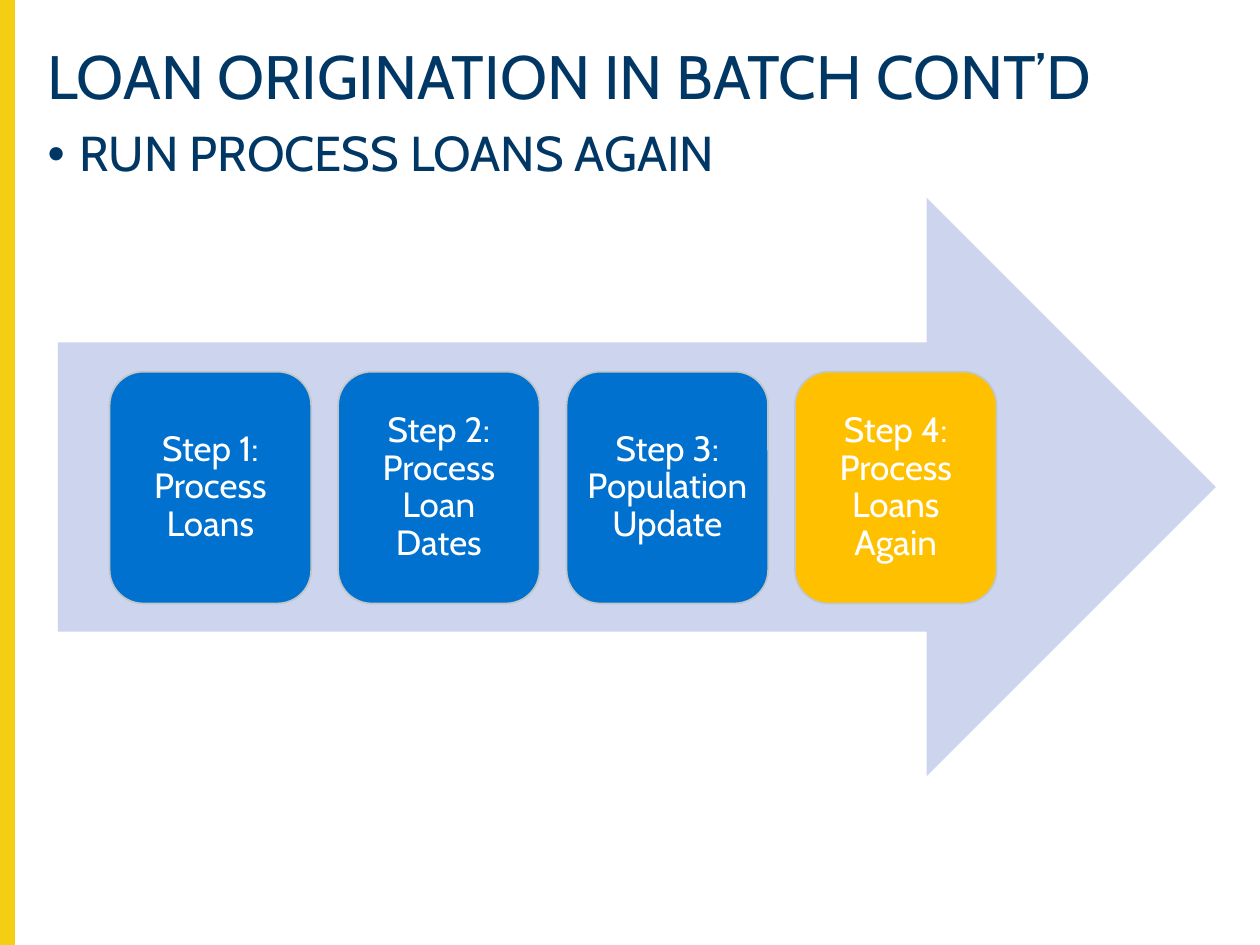
from dataclasses import dataclass

from lxml.etree import SubElement
from pptx import Presentation
from pptx.dml.color import RGBColor as Rgb
from pptx.enum.shapes import MSO_SHAPE as Shape
from pptx.enum.text import MSO_ANCHOR as Anchor, PP_ALIGN as Align
from pptx.oxml.ns import qn
from pptx.util import Inches, Pt


@dataclass(frozen=True)
class Theme:
    font: str = "Cabin"
    navy: str = "003764"
    band: str = "F4CE12"
    pale: str = "CCD5ED"
    blue: str = "0071CE"
    gold: str = "FFC000"
    edge: str = "C3C6C8"
    white: str = "FFFFFF"
    title: int = 35
    body: int = 28
    step: int = 20


class Deck:
    def __init__(self, theme):
        self.theme = theme
        self.show = Presentation()
        self.show.slide_width, self.show.slide_height = Inches(10), Inches(7.5)
        self.slide = self.show.slides.add_slide(self.show.slide_layouts[6])

    def label(self, frame, text, size, color):
        """Fill a text frame with one styled paragraph and return it."""
        frame.word_wrap = True
        frame.text = text
        para = frame.paragraphs[0]
        para.line_spacing = 0.9
        font = para.runs[0].font
        font.name, font.size = self.theme.font, Pt(size)
        font.color.rgb = Rgb.from_string(color)
        return para

    def text(self, box, text, size):
        item = self.slide.shapes.add_textbox(*map(Inches, box))
        item.text_frame.vertical_anchor = Anchor.TOP
        return self.label(item.text_frame, text, size, self.theme.navy)

    def bullet(self, box, text, size):
        para = self.text(box, text, size)
        para.space_before = Pt(10)
        props = para._p.get_or_add_pPr()
        props.set("marL", str(Inches(0.25)))
        props.set("indent", str(-Inches(0.25)))
        SubElement(props, qn("a:buFont")).set("typeface", "Arial")
        SubElement(props, qn("a:buChar")).set("char", "•")

    def shape(self, kind, box, fill, line=None):
        item = self.slide.shapes.add_shape(kind, *map(Inches, box))
        item.shadow.inherit = False
        item.fill.solid()
        item.fill.fore_color.rgb = Rgb.from_string(fill)
        if line:
            item.line.color.rgb = Rgb.from_string(line)
            item.line.width = Pt(1)
        else:
            item.line.fill.background()
        return item

    def step(self, box, text, fill):
        item = self.shape(Shape.ROUNDED_RECTANGLE, box, fill, self.theme.edge)
        frame = item.text_frame
        frame.margin_left = frame.margin_right = Inches(0.08)
        frame.margin_top = frame.margin_bottom = Inches(0.08)
        frame.vertical_anchor = Anchor.MIDDLE
        para = self.label(frame, text, self.theme.step, self.theme.white)
        para.alignment = Align.CENTER


def main():
    theme = Theme()
    deck = Deck(theme)
    deck.shape(Shape.RECTANGLE, (0, 0, 0.11, 7.5), theme.band, theme.band)
    deck.text((0.28, 0.32, 9.37, 0.86), "LOAN ORIGINATION IN BATCH CONT’D", theme.title)
    deck.bullet((0.28, 0.98, 9.41, 5.74), "RUN PROCESS LOANS AGAIN", theme.body)
    deck.shape(Shape.RIGHT_ARROW, (0.46, 1.57, 9.19, 4.59), theme.pale)

    steps = (
        ("Process Loans", theme.blue),
        ("Process Loan Dates", theme.blue),
        ("Population Update", theme.blue),
        ("Process Loans Again", theme.gold),
    )
    first, last = 0.87, 6.31
    pitch = (last - first) / (len(steps) - 1)
    for i, (name, fill) in enumerate(steps):
        box = (first + i * pitch, 2.95, 1.6, 1.84)
        deck.step(box, f"Step {i + 1}: {name}", fill)
    deck.show.save("out.pptx")


if __name__ == "__main__":
    main()
